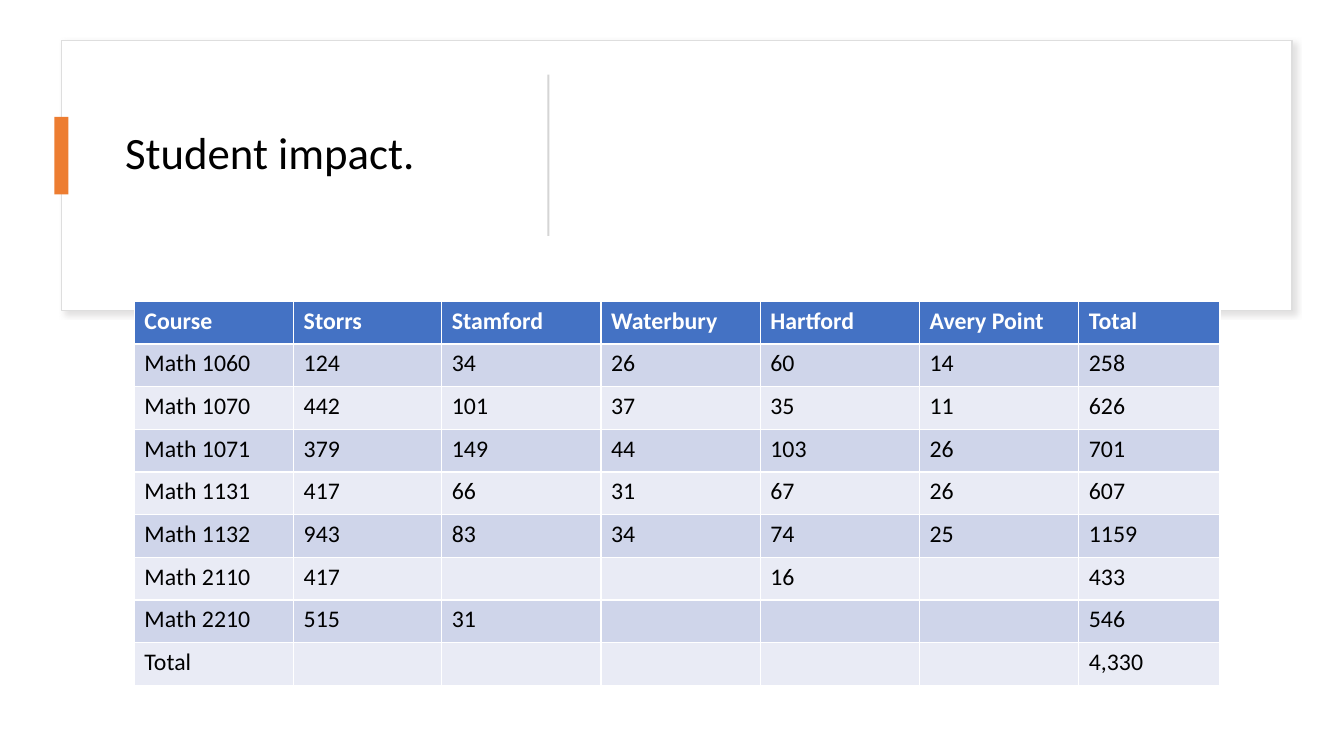
from lxml import etree
from pptx import Presentation
from pptx.dml.color import RGBColor
from pptx.enum import shapes, text
from pptx.oxml import ns
from pptx.util import Pt

# Content
HEADING = "Student impact."
ROWS = [
    ("Course", "Storrs", "Stamford", "Waterbury", "Hartford", "Avery Point", "Total"),
    ("Math 1060", "124", "34", "26", "60", "14", "258"),
    ("Math 1070", "442", "101", "37", "35", "11", "626"),
    ("Math 1071", "379", "149", "44", "103", "26", "701"),
    ("Math 1131", "417", "66", "31", "67", "26", "607"),
    ("Math 1132", "943", "83", "34", "74", "25", "1159"),
    ("Math 2110", "417", "", "", "16", "", "433"),
    ("Math 2210", "515", "31", "", "", "", "546"),
    ("Total", "", "", "", "", "", "4,330"),
]
WIDTHS = [113.76, 105.84, 113.76, 113.76, 113.76, 113.76, 100.8]
ROW_H = 30.48
HEAD, BANDS = "4472C4", ("E9EBF5", "CFD5EA")
FONT = "Calibri"


def color(part, code):
    """Set a fill or a font to a hex colour."""
    if hasattr(part, "solid"):
        part.solid()
        part.fore_color.rgb = RGBColor.from_string(code)
    else:
        part.color.rgb = RGBColor.from_string(code)


def write(par, words, size, code, bold=False):
    run = par.add_run()
    run.text = words
    run.font.name, run.font.size, run.font.bold = FONT, Pt(size), bold
    color(run.font, code)


def block(slide, box, code):
    shape = slide.shapes.add_shape(
        shapes.MSO_SHAPE.RECTANGLE, *(Pt(n) for n in box))
    shape.shadow.inherit = False
    color(shape.fill, code)
    shape.line.fill.background()
    return shape


def shade(shape):
    """Cast a soft grey shadow down and to the right."""
    list_ = shape._element.spPr.find(ns.qn("a:effectLst"))
    cast = etree.SubElement(list_, ns.qn("a:outerShdw"), blurRad=str(Pt(4)),
                            dist=str(Pt(3)), dir=str(45 * 60000), algn="tl",
                            rotWithShape="0")
    tint = etree.SubElement(cast, ns.qn("a:srgbClr"), val="C5C3C3")
    etree.SubElement(tint, ns.qn("a:alpha"), val="50000")


def main():
    deck = Presentation()
    deck.slide_width, deck.slide_height = Pt(960), Pt(540)
    slide = deck.slides.add_slide(deck.slide_layouts[5])

    # Panel, behind the title
    title = slide.shapes.title
    panel = block(slide, (43.92, 28.8, 879.12, 192.96), "FFFFFF")
    color(panel.line.fill, "DEDEDE")
    panel.line.width = Pt(1)
    shade(panel)
    title._element.addprevious(panel._element)

    # Title
    title.left, title.top = Pt(82.08), Pt(46.08)
    title.width, title.height = Pt(280.08), Pt(129.6)
    frame = title.text_frame
    frame.word_wrap = True
    frame.vertical_anchor = text.MSO_ANCHOR.MIDDLE
    par = frame.paragraphs[0]
    par.alignment, par.line_spacing = text.PP_ALIGN.LEFT, 0.9
    write(par, HEADING, 32, "000000")

    # Accent tab and upright divider
    block(slide, (38.88, 83.52, 10.08, 55.44), "ED7D31")
    block(slide, (334.08, 110.16, 115.2, 1.44), "D5D5D5").rotation = 90

    # Table
    grid = slide.shapes.add_table(
        len(ROWS), len(WIDTHS), Pt(96), Pt(215.28),
        Pt(sum(WIDTHS)), Pt(ROW_H * len(ROWS))).table
    for col, width in zip(grid.columns, WIDTHS):
        col.width = Pt(width)
    for i, row in enumerate(ROWS):
        grid.rows[i].height = Pt(ROW_H)
        top = i == 0
        for j, words in enumerate(row):
            cell = grid.cell(i, j)
            color(cell.fill, HEAD if top else BANDS[i % 2])
            if words:
                write(cell.text_frame.paragraphs[0], words, 17,
                      "FFFFFF" if top else "000000", top)

    deck.save("out.pptx")


if __name__ == "__main__":
    main()
